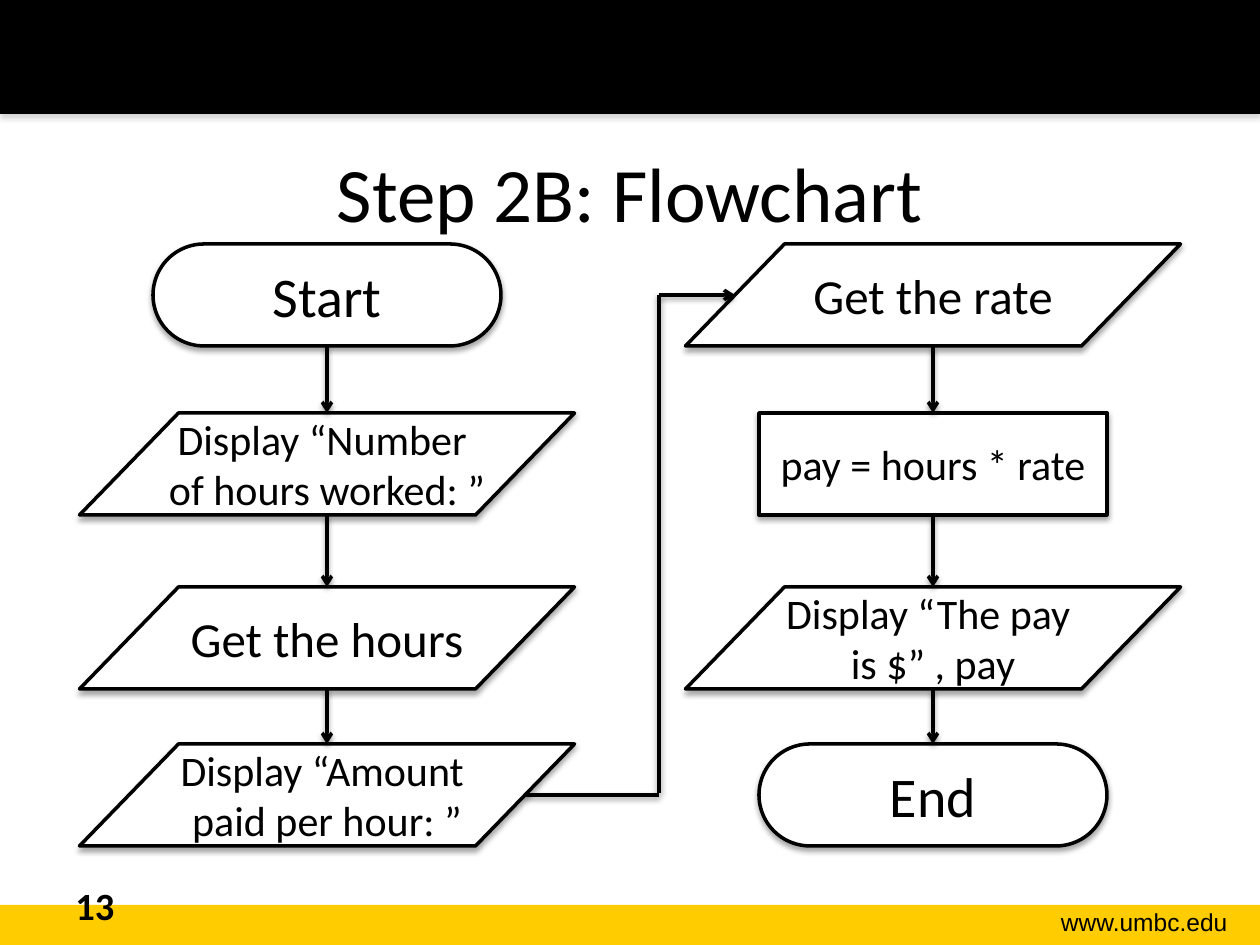
import itertools

import lxml.etree
import pptx
import pptx.dml.color
import pptx.enum.shapes
import pptx.enum.text
import pptx.oxml.ns
import pptx.util

BLACK = pptx.dml.color.RGBColor(0, 0, 0)
WHITE = pptx.dml.color.RGBColor(255, 255, 255)
GOLD = pptx.dml.color.RGBColor(0xFF, 0xCC, 0)
GREY = pptx.dml.color.RGBColor(0x80, 0x80, 0x80)

SHAPE = pptx.enum.shapes.MSO_SHAPE
ALIGN = pptx.enum.text.PP_ALIGN
ANCHOR = pptx.enum.text.MSO_ANCHOR
FIT = pptx.enum.text.MSO_AUTO_SIZE

EMU_PER_PX = 914400 / 126
STEP_HEIGHT = 102
ROW_TOPS = [244, 413, 587, 744]
LEFT_CENTRE, RIGHT_CENTRE = 327, 933
TERMINAL = (SHAPE.ROUNDED_RECTANGLE, 348, 32)
PROCESS = (SHAPE.RECTANGLE, 348, 24)
PROMPT = (SHAPE.FLOWCHART_DATA, 495, 24)
INPUT = (SHAPE.FLOWCHART_DATA, 495, 28)
COLUMNS = {
    LEFT_CENTRE: [
        (TERMINAL, "Start"),
        (PROMPT, "Display “Number \vof hours worked: ”"),
        (INPUT, "Get the hours"),
        (PROMPT, "Display “Amount \vpaid per hour: ”"),
    ],
    RIGHT_CENTRE: [
        (INPUT, "Get the rate"),
        (PROCESS, "pay = hours * rate"),
        (PROMPT, "Display “The pay \vis $” , pay"),
        (TERMINAL, "End"),
    ],
}


def px(*lengths):
    return [pptx.util.Emu(round(length * EMU_PER_PX)) for length in lengths]


def add_element(parent, tag, **attributes):
    values = {name: str(value) for name, value in attributes.items()}
    return lxml.etree.SubElement(parent, pptx.oxml.ns.qn(tag), values)


def add_shadow(shape, color=BLACK, opacity=35, distance=23000):
    effects = add_element(shape._element.spPr, "a:effectLst")
    outer = add_element(effects, "a:outerShdw", blurRad=40000, dist=distance,
                        dir=5400000, rotWithShape=0)
    tint = add_element(outer, "a:srgbClr", val=color)
    add_element(tint, "a:alpha", val=opacity * 1000)


def write(frame, text, size, font="Calibri", bold=False, align=ALIGN.CENTER,
          anchor=ANCHOR.MIDDLE, wrap=True, fit=FIT.NONE):
    frame.word_wrap = wrap
    frame.auto_size = fit
    frame.vertical_anchor = anchor
    paragraph = frame.paragraphs[0]
    paragraph.text = text
    paragraph.alignment = align
    for run in paragraph.runs:
        run.font.name = font
        run.font.size = pptx.util.Pt(size)
        run.font.bold = bold
        run.font.color.rgb = BLACK


def add_band(slide, top, height, color):
    band = slide.shapes.add_shape(SHAPE.RECTANGLE, *px(0, top, 1260, height))
    band.fill.solid()
    band.fill.fore_color.rgb = color
    band.line.fill.background()
    return band


def add_step(slide, centre, top, kind, text):
    preset, width, size = kind
    step = slide.shapes.add_shape(
        preset, *px(centre - width / 2, top, width, STEP_HEIGHT))
    if preset == SHAPE.ROUNDED_RECTANGLE:
        step.adjustments[0] = 0.5
    step.fill.solid()
    step.fill.fore_color.rgb = WHITE
    step.line.color.rgb = BLACK
    step.line.width = pptx.util.Pt(2)
    add_shadow(step)
    write(step.text_frame, text, size, wrap=preset != SHAPE.FLOWCHART_DATA)


def add_flow(slide, start, end, arrow=True):
    flow = slide.shapes.add_connector(
        pptx.enum.shapes.MSO_CONNECTOR.STRAIGHT, *px(*start, *end))
    flow.line.color.rgb = BLACK
    flow.line.width = pptx.util.Pt(2)
    if arrow:
        add_element(flow.line._get_or_add_ln(), "a:tailEnd", type="arrow")
    add_shadow(flow, opacity=38, distance=20000)


def main():
    deck = pptx.Presentation()
    deck.slide_width, deck.slide_height = px(1260, 945)
    slide = deck.slides.add_slide(deck.slide_layouts[5])

    add_band(slide, 905, 40, GOLD).shadow.inherit = False
    add_shadow(add_band(slide, 0, 114, BLACK), color=GREY)

    title = slide.shapes.title
    title.left, title.top, title.width, title.height = px(63, 113, 1134, 158)
    write(title.text_frame, "Step 2B: Flowchart", 44)

    website = slide.shapes.add_textbox(*px(989, 901, 251, 43))
    write(website.text_frame, "www.umbc.edu", 14, font="Arial",
          align=ALIGN.RIGHT, anchor=ANCHOR.TOP, fit=FIT.SHAPE_TO_FIT_TEXT)
    page_number = slide.shapes.add_textbox(*px(63, 876, 294, 50))
    write(page_number.text_frame, "13", 22, bold=True, align=ALIGN.LEFT,
          anchor=ANCHOR.TOP)

    for centre, steps in COLUMNS.items():
        for top, (kind, text) in zip(ROW_TOPS, steps):
            add_step(slide, centre, top, kind, text)
        for top, next_top in itertools.pairwise(ROW_TOPS):
            add_flow(slide, (centre, top + STEP_HEIGHT), (centre, next_top))

    add_flow(slide, (659, 295), (735, 295))
    add_flow(slide, (525, 795), (659, 795), arrow=False)
    add_flow(slide, (659, 295), (659, 793), arrow=False)

    deck.save("out.pptx")


if __name__ == "__main__":
    main()
